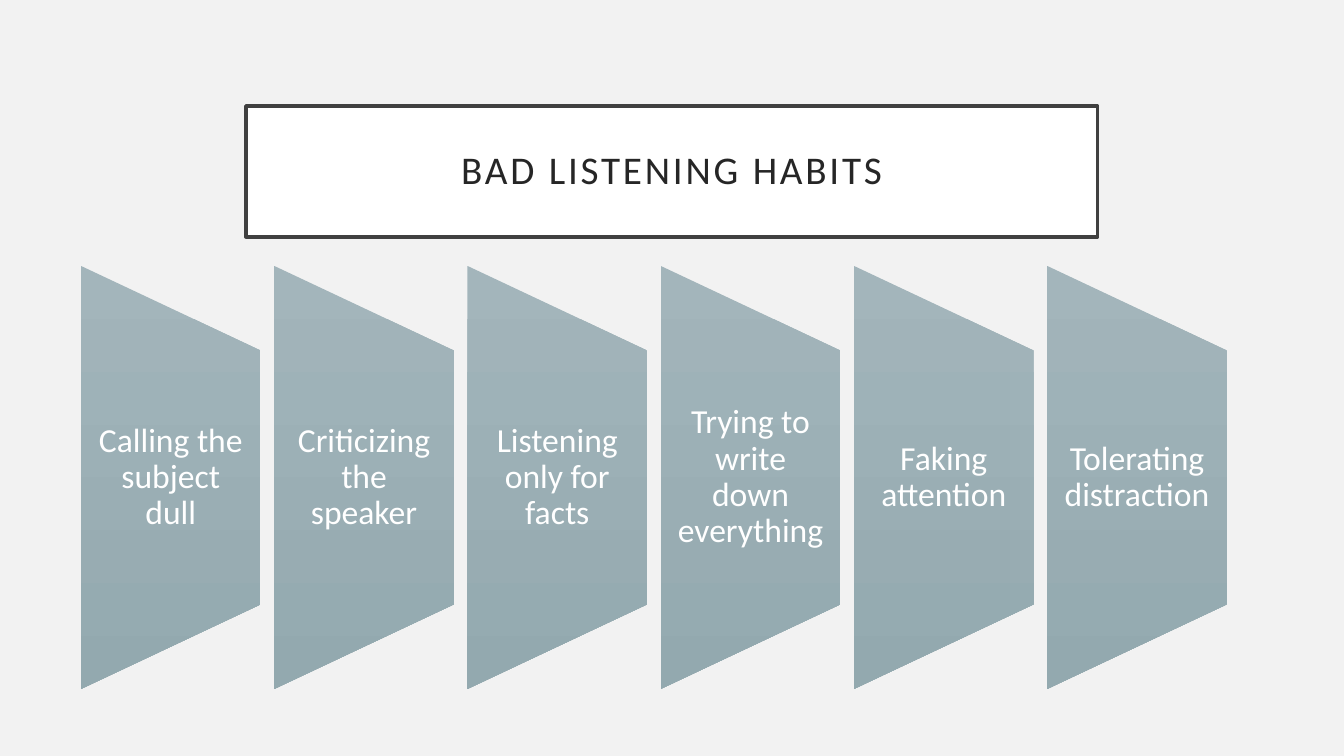
from dataclasses import dataclass

from pptx import Presentation
from pptx.dml.color import RGBColor
from pptx.enum.shapes import MSO_SHAPE
from pptx.enum.text import MSO_ANCHOR, PP_ALIGN
from pptx.util import Cm, Pt

RECTANGLE = MSO_SHAPE.RECTANGLE
TRAPEZOID = MSO_SHAPE.FLOWCHART_MANUAL_OPERATION
MIDDLE = MSO_ANCHOR.MIDDLE
CENTER = PP_ALIGN.CENTER


@dataclass(frozen=True)
class Theme:
    font: str = "Calibri"
    background: RGBColor = RGBColor(0xF2, 0xF2, 0xF2)
    title_fill: RGBColor = RGBColor(0xFF, 0xFF, 0xFF)
    title_border: RGBColor = RGBColor(0x40, 0x40, 0x40)
    title_text: RGBColor = RGBColor(0x26, 0x26, 0x26)
    panel_top: RGBColor = RGBColor(0xA3, 0xB5, 0xBB)
    panel_bottom: RGBColor = RGBColor(0x93, 0xA9, 0xAF)
    panel_text: RGBColor = RGBColor(0xFF, 0xFF, 0xFF)
    title_size: Pt = Pt(28)
    panel_size: Pt = Pt(24)


THEME = Theme()

TITLE = "BAD LISTENING HABITS"
HABITS = [
    "Calling the subject dull",
    "Criticizing the speaker",
    "Listening only for facts",
    "Trying to write down everything",
    "Faking attention",
    "Tolerating distraction",
]

# Panel row, in centimetres
ROW_LEFT, ROW_MIDDLE, PITCH = 2.04, 12.03, 4.87
PANEL_WIDTH, PANEL_HEIGHT, LABEL_HEIGHT = 4.53, 10.66, 6.4


def apply_format(target, values):
    for name, value in values.items():
        setattr(target, name, value)


def write_text(box, text, size, color, inset_x, inset_y, space_after=Pt(0)):
    """Fill a box with one centred paragraph and return its run."""
    frame = box.text_frame
    apply_format(frame, {
        "word_wrap": True, "vertical_anchor": MIDDLE,
        "margin_left": inset_x, "margin_right": inset_x,
        "margin_top": inset_y, "margin_bottom": inset_y,
    })
    para = frame.paragraphs[0]
    apply_format(para, {"alignment": CENTER, "line_spacing": 0.9,
                        "space_after": space_after})
    span = para.add_run()
    span.text = text
    apply_format(span.font, {"name": THEME.font, "size": size})
    span.font.color.rgb = color
    return span


def add_title(page):
    box = page.shapes.add_shape(RECTANGLE, Cm(6.2), Cm(2.67), Cm(21.46), Cm(3.3))
    box.shadow.inherit = False
    box.fill.solid()
    box.fill.fore_color.rgb = THEME.title_fill
    box.line.color.rgb = THEME.title_border
    box.line.width = Pt(2.5)
    span = write_text(box, TITLE, THEME.title_size, THEME.title_text,
                      Cm(0.51), Cm(0.51))
    # Letter spacing, in hundredths of a point
    span._r.get_or_add_rPr().set("spc", "200")


def add_panel(group, left):
    """Draw a trapezoid lying on its side, shaded from top to bottom."""
    # The frame is placed unrotated, so it shares only its centre with the panel
    center = left + PANEL_WIDTH / 2
    panel = group.shapes.add_shape(
        TRAPEZOID, Cm(center - PANEL_HEIGHT / 2), Cm(ROW_MIDDLE - PANEL_WIDTH / 2),
        Cm(PANEL_HEIGHT), Cm(PANEL_WIDTH))
    panel.rotation = 270
    panel.shadow.inherit = False
    panel.line.fill.background()
    panel.fill.gradient()
    panel.fill.gradient_angle = 270
    for stop, color in zip(panel.fill.gradient_stops,
                           (THEME.panel_top, THEME.panel_bottom)):
        stop.color.rgb = color
    # Keep the shading upright while the shape is turned
    panel._element.spPr.find("{*}gradFill").set("rotWithShape", "0")


def add_label(group, left, text):
    label = group.shapes.add_textbox(
        Cm(left), Cm(ROW_MIDDLE - LABEL_HEIGHT / 2),
        Cm(PANEL_WIDTH), Cm(LABEL_HEIGHT))
    write_text(label, text, THEME.panel_size, THEME.panel_text,
               Cm(0.42), Cm(0), space_after=Pt(8.4))


def main():
    deck = Presentation()
    apply_format(deck, {"slide_width": Cm(33.87), "slide_height": Cm(19.05)})
    page = deck.slides.add_slide(deck.slide_layouts[6])
    page.background.fill.solid()
    page.background.fill.fore_color.rgb = THEME.background

    add_title(page)

    # Row of habits
    group = page.shapes.add_group_shape()
    for index, habit in enumerate(HABITS):
        left = ROW_LEFT + index * PITCH
        add_panel(group, left)
        add_label(group, left, habit)

    deck.save("out.pptx")


if __name__ == "__main__":
    main()
